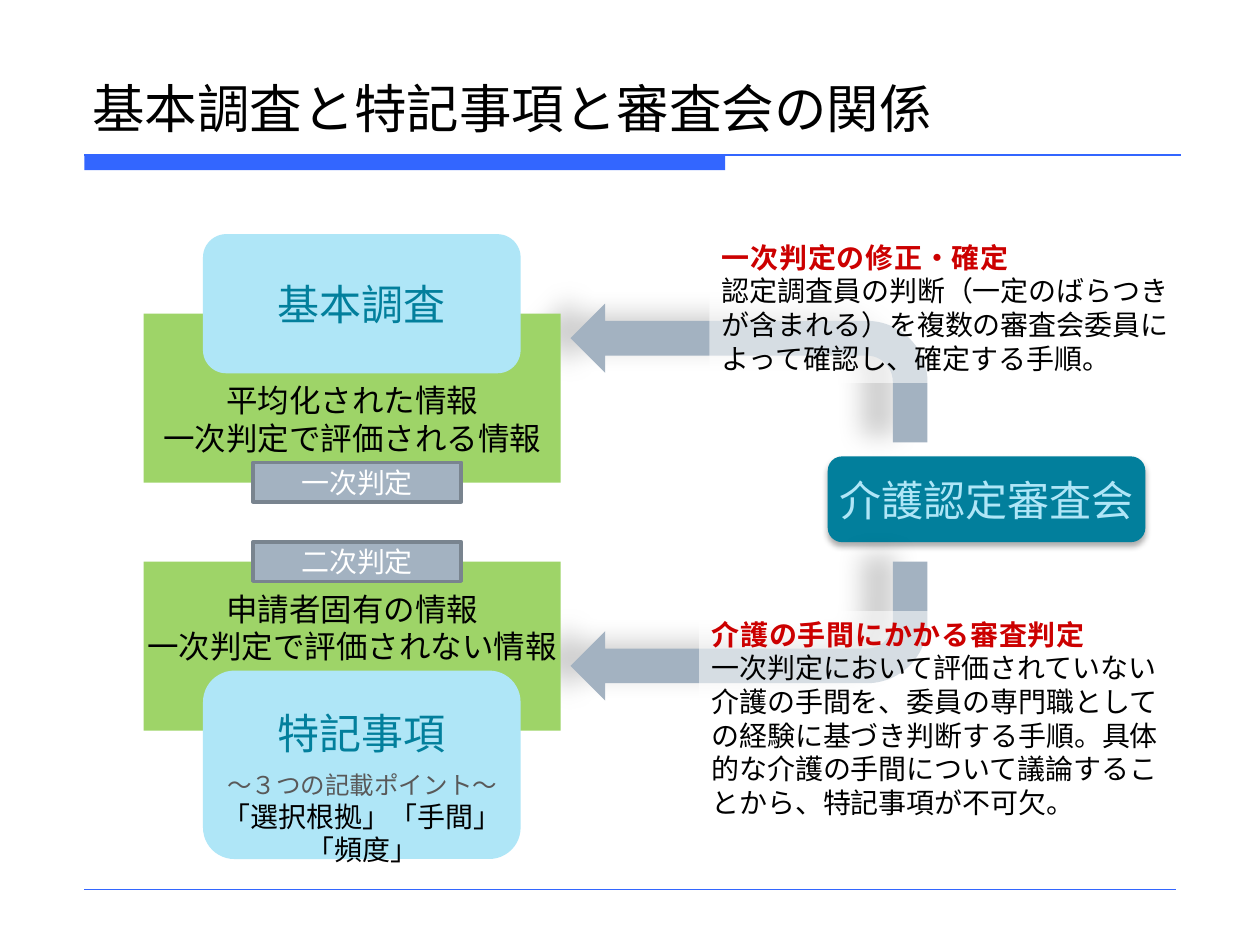
from lxml.etree import SubElement
from pptx import Presentation
from pptx.dml.color import RGBColor
from pptx.enum.shapes import MSO_CONNECTOR as LINE, MSO_SHAPE as SHAPE
from pptx.enum.text import MSO_ANCHOR as ANCHOR, MSO_AUTO_SIZE as FIT, PP_ALIGN as ALIGN
from pptx.oxml.ns import qn
from pptx.util import Pt

BLUE = RGBColor(0x33, 0x66, 0xFF)
TEAL = RGBColor(0x02, 0x7F, 0x9C)
SKY = RGBColor(0xAF, 0xE6, 0xF7)
GREEN = RGBColor(0x9E, 0xD4, 0x68)
STEEL = RGBColor(0xA3, 0xB2, 0xC1)
STEEL_EDGE = RGBColor(0x79, 0x84, 0x8F)
RED = RGBColor(0xCC, 0x00, 0x00)
GRAY = RGBColor(0x59, 0x59, 0x59)
BLACK = RGBColor(0, 0, 0)
WHITE = RGBColor(255, 255, 255)
MAIN, LABEL = "DejaVu Sans", "Noto Sans CJK JP"

TITLE = "基本調査と特記事項と審査会の関係"
BOARD = "介護認定審査会"
SURVEY = {
    "top": 179.3, "anchor": ANCHOR.BOTTOM, "inset": 15,
    "lines": ["平均化された情報", "一次判定で評価される情報"],
    "head": "基本調査", "head_top": 133.8, "head_height": 79.5,
    "head_anchor": ANCHOR.MIDDLE, "head_inset": 3.6,
}
NOTES = {
    "top": 321, "anchor": ANCHOR.TOP, "inset": 16,
    "lines": ["申請者固有の情報", "一次判定で評価されない情報"],
    "head": "特記事項", "head_top": 383.2, "head_height": 107.7,
    "head_anchor": ANCHOR.TOP, "head_inset": 16,
}
ARROWS = [(321, False), (173.5, True)]
COMMENTS = [
    ((405.4, 133.8, 283.5, 85), "一次判定の修正・確定",
     "認定調査員の判断（一定のばらつきが含まれる）を複数の審査会委員によって確認し、確定する手順。"),
    ((399.5, 349.2, 283.5, 123.8), "介護の手間にかかる審査判定",
     "一次判定において評価されていない介護の手間を、委員の専門職としての経験に基づき判断する手順。"
     "具体的な介護の手間について議論することから、特記事項が不可欠。"),
]
STAGES = [("一次判定", 264.2), ("二次判定", 309.6)]
POINTS = [("～３つの記載ポイント～", 14, GRAY), ("「選択根拠」「手間」「頻度」", 16, BLACK)]


def add_run(paragraph, words, size, color, font=MAIN, bold=False, spacing=0):
    run = paragraph.add_run()
    run.text = words
    run.font.size, run.font.name, run.font.bold = Pt(size), font, bold
    run.font.color.rgb = color
    props = run.font._element
    SubElement(props, qn("a:ea")).set("typeface", font)
    if spacing:
        props.set("spc", str(int(spacing * 100)))


def write(shape, lines, anchor=ANCHOR.MIDDLE, align=ALIGN.CENTER, wrap=False, top=3.6, bottom=3.6):
    frame = shape.text_frame
    frame.word_wrap, frame.auto_size = wrap, FIT.NONE
    frame.vertical_anchor = anchor
    frame.margin_top, frame.margin_bottom = Pt(top), Pt(bottom)
    for index, line in enumerate(lines):
        paragraph = frame.add_paragraph() if index else frame.paragraphs[0]
        paragraph.alignment = align
        add_run(paragraph, *line)


def add_block(slide, kind, box, fill):
    block = slide.shapes.add_shape(kind, *map(Pt, box))
    block.shadow.inherit = False
    block.fill.solid()
    block.fill.fore_color.rgb = fill
    block.line.fill.background()
    return block


def cast_shadow(block, opacity, blur, distance, angle):
    effects = block._element.spPr.find(qn("a:effectLst"))
    shadow = SubElement(effects, qn("a:outerShdw"), blurRad=str(Pt(blur)), dist=str(Pt(distance)),
                        dir=str(angle * 60000), algn="ctr", rotWithShape="0")
    tint = SubElement(shadow, qn("a:srgbClr"), val=str(BLACK))
    SubElement(tint, qn("a:alpha"), val=str(opacity * 1000))


def add_rule(slide, left, right, y, width):
    rule = slide.shapes.add_connector(LINE.STRAIGHT, Pt(left), Pt(y), Pt(right), Pt(y))
    rule.line.color.rgb, rule.line.width = BLUE, Pt(width)
    SubElement(rule._element.spPr, qn("a:effectLst"))


def add_source(slide, source):
    low = source["anchor"] == ANCHOR.BOTTOM
    info = add_block(slide, SHAPE.RECTANGLE, (82, source["top"], 238.3, 96.5), GREEN)
    write(info, [(line, 18, BLACK) for line in source["lines"]], source["anchor"],
          top=3.6 if low else source["inset"], bottom=source["inset"] if low else 3.6)
    head = add_block(slide, SHAPE.ROUNDED_RECTANGLE,
                     (116, source["head_top"], 181.5, source["head_height"]), SKY)
    write(head, [(source["head"], 24, TEAL)], source["head_anchor"], top=source["head_inset"])


def main():
    deck = Presentation()
    deck.slide_width, deck.slide_height = Pt(720), Pt(540)
    slide = deck.slides.add_slide(deck.slide_layouts[5])

    add_block(slide, SHAPE.RECTANGLE, (48.2, 88.6, 366.2, 8.6), BLUE)
    add_rule(slide, 48.2, 674.6, 88.6, 0.75)
    add_rule(slide, 48.2, 672, 508.2, 0.25)

    title = slide.shapes.title
    title.left, title.top, title.width, title.height = map(Pt, (45.4, 23.8, 630, 59))
    write(title, [(TITLE, 30, BLACK)], ANCHOR.BOTTOM, ALIGN.LEFT, wrap=True)

    board = add_block(slide, SHAPE.ROUNDED_RECTANGLE, (473, 260.8, 181.5, 49), TEAL)
    cast_shadow(board, 32, 3.5, 2.2, 90)
    write(board, [(BOARD, 24, SKY)])

    for top, flipped in ARROWS:
        arrow = add_block(slide, SHAPE.BENT_ARROW, (326, top, 204, 79.3), STEEL)
        arrow.rotation = 180
        if flipped:
            arrow._element.spPr.xfrm.set("flipV", "1")
        cast_shadow(arrow, 18, 14.5, 19, 192)

    for source in (SURVEY, NOTES):
        add_source(slide, source)

    for box, heading, body in COMMENTS:
        comment = add_block(slide, SHAPE.RECTANGLE, box, WHITE)
        tint = comment._element.spPr.find(qn("a:solidFill"))[0]
        SubElement(tint, qn("a:alpha"), val="56000")
        write(comment, [(heading, 16, RED, MAIN, True, 0.5), (body, 16, BLACK)],
              ANCHOR.TOP, ALIGN.LEFT, wrap=True)

    for stage, top in STAGES:
        tag = add_block(slide, SHAPE.RECTANGLE, (144.6, top, 119, 22.6), STEEL)
        tag.line.color.rgb, tag.line.width = STEEL_EDGE, Pt(2)
        write(tag, [(stage, 16, WHITE, LABEL)], wrap=True)

    points = slide.shapes.add_textbox(*map(Pt, (111, 436.3, 192, 44)))
    write(points, [(words, size, color, LABEL if size == 14 else MAIN) for words, size, color in POINTS],
          ANCHOR.TOP, wrap=True)

    deck.save("out.pptx")


if __name__ == "__main__":
    main()
